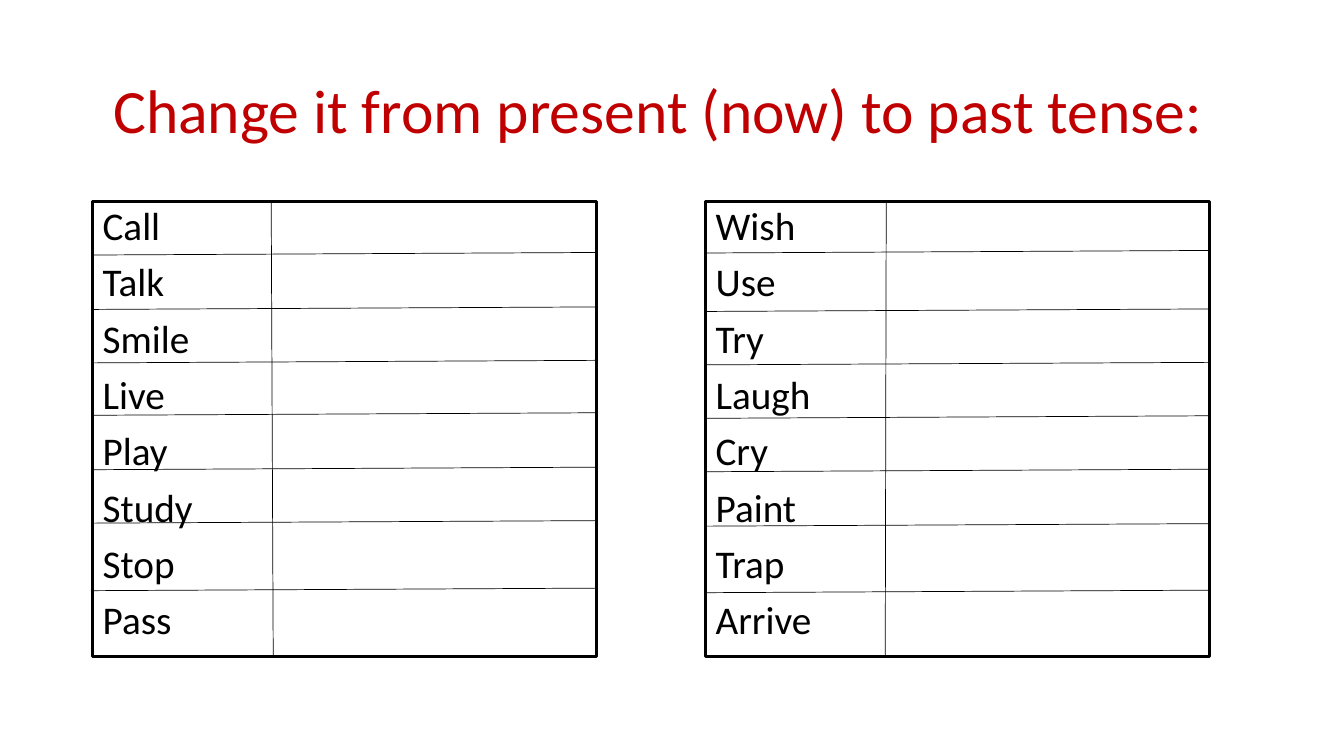
from pptx import Presentation
from pptx.dml.color import RGBColor
from pptx.enum import shapes, text
from pptx.oxml.ns import qn
from pptx.util import Inches, Pt
from lxml import etree

# Content
TITLE = "Change it from present (now) to past tense:"
# Each box: left edge, words, divider x at top and bottom, row line heights
BOXES = [
    dict(left=0.92,
         words=["Call", "Talk", "Smile", "Live", "Play", "Study", "Stop", "Pass"],
         divider=(2.69, 2.71),
         rows=[2.53, 3.07, 3.6, 4.12, 4.66, 5.19, 5.86]),
    dict(left=7,
         words=["Wish", "Use", "Try", "Laugh", "Cry", "Paint", "Trap", "Arrive"],
         divider=(8.79, 8.78),
         rows=[2.51, 3.09, 3.62, 4.15, 4.68, 5.22, 5.88]),
]
COLORS = {"title": "C00000", "ink": "000000", "paper": "FFFFFF"}
TOP, WIDTH, HEIGHT = 2, 5, 4.51
ROW_RISE = 0.025  # row lines climb slightly to the right


def rgb(name):
    return RGBColor.from_string(COLORS[name])


def write(tf, lines, size, color, align, anchor, before=0):
    tf.word_wrap = True
    tf.auto_size = text.MSO_AUTO_SIZE.NONE
    tf.vertical_anchor = anchor
    for i, line in enumerate(lines):
        p = tf.add_paragraph() if i else tf.paragraphs[0]
        p.alignment = align
        p.line_spacing = 0.9
        p.space_before = Pt(before)
        r = p.add_run()
        r.text = line
        r.font.name = "Calibri"
        r.font.size = Pt(size)
        r.font.color.rgb = rgb(color)


def add_rule(slide, x1, y1, x2, y2):
    line = slide.shapes.add_connector(
        shapes.MSO_CONNECTOR.STRAIGHT,
        Inches(x1), Inches(y1), Inches(x2), Inches(y2))
    line.line.color.rgb = rgb("ink")
    line.line.width = Pt(0.5)
    etree.SubElement(line._element.spPr, qn("a:effectLst"))


def add_box(slide, left, words):
    sp = slide.shapes.add_shape(
        shapes.MSO_SHAPE.RECTANGLE,
        Inches(left), Inches(TOP), Inches(WIDTH), Inches(HEIGHT))
    sp.shadow.inherit = False
    sp.fill.solid()
    sp.fill.fore_color.rgb = rgb("paper")
    sp.line.color.rgb = rgb("ink")
    sp.line.width = Pt(2.25)
    write(sp.text_frame, words, 28, "ink",
          text.PP_ALIGN.LEFT, text.MSO_ANCHOR.TOP, before=10)


def main():
    prs = Presentation()
    prs.slide_width, prs.slide_height = Inches(13.33), Inches(7.5)
    slide = prs.slides.add_slide(prs.slide_layouts[5])

    # Title, centred a little left of the middle
    title = slide.shapes.title
    title.left, title.top = Inches(0.92), Inches(0.4)
    title.width, title.height = Inches(11.5), Inches(1.45)
    title.text_frame.margin_right = Inches(0.38)
    write(title.text_frame, [TITLE], 44, "title",
          text.PP_ALIGN.CENTER, text.MSO_ANCHOR.MIDDLE)

    # Word boxes with their ruled lines
    for box in BOXES:
        left = box["left"]
        add_box(slide, left, box["words"])
        x_top, x_bottom = box["divider"]
        add_rule(slide, x_top, TOP, x_bottom, TOP + HEIGHT)
        for y in box["rows"]:
            add_rule(slide, left, y, left + WIDTH, y - ROW_RISE)

    prs.save("out.pptx")


if __name__ == "__main__":
    main()
